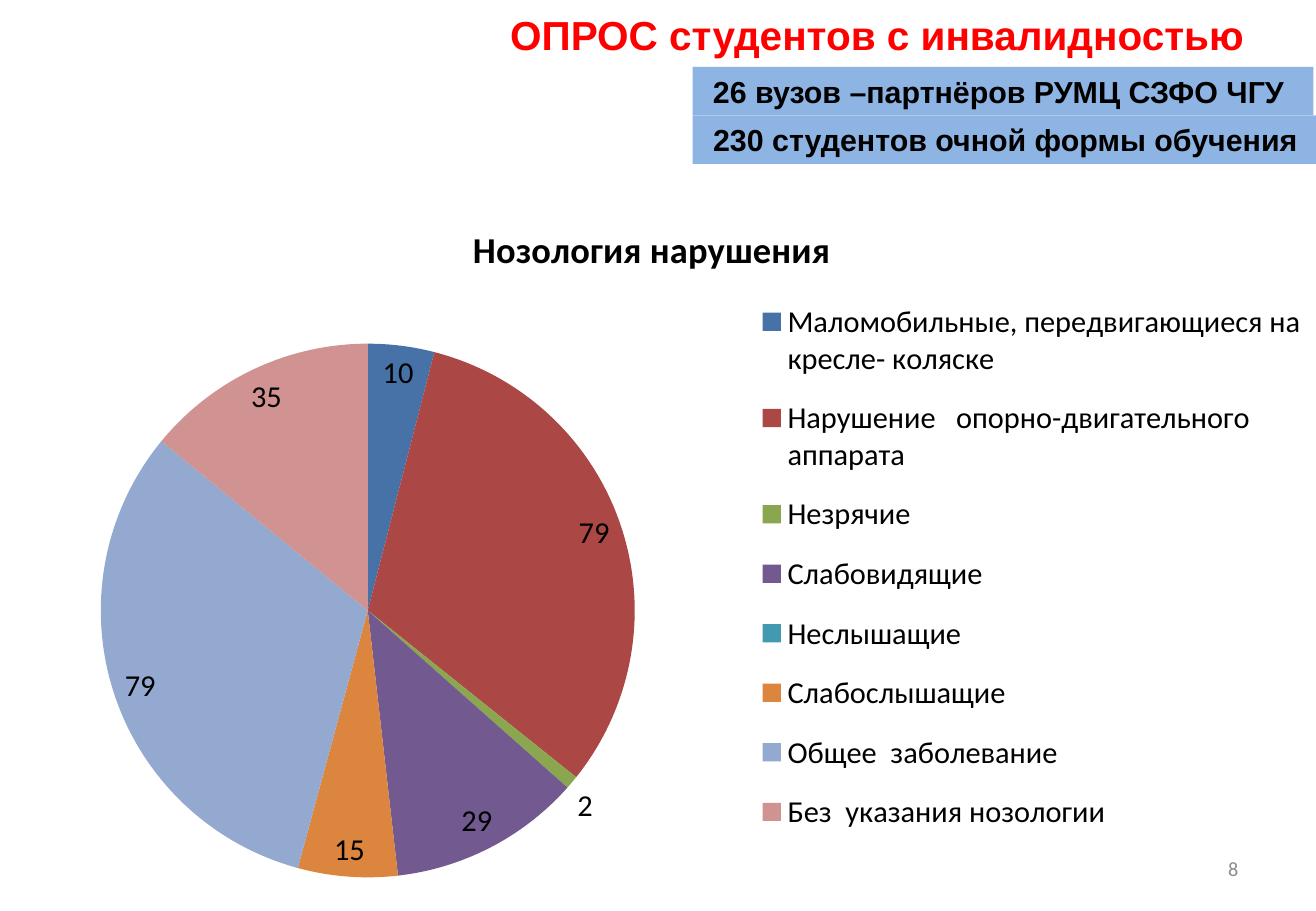
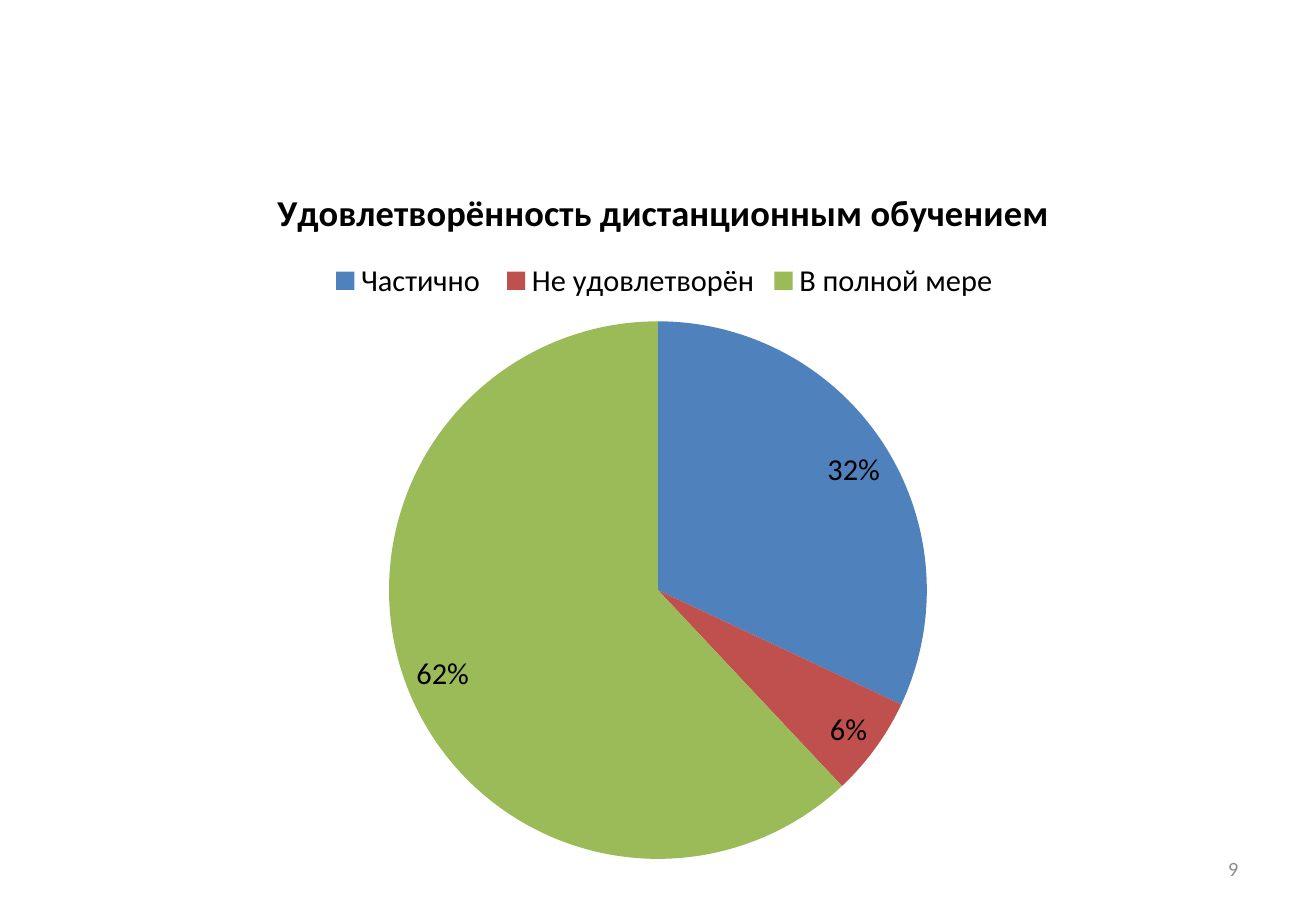
from dataclasses import dataclass
from typing import Optional

from lxml import etree
from pptx import Presentation
from pptx import util as u
from pptx.chart import data as chart_data
from pptx.dml.color import RGBColor
from pptx.enum import chart as charts, shapes, text
from pptx.oxml import ns

WIDTH, HEIGHT = u.Inches(10.83), u.Inches(7.5)

BLACK = RGBColor(0x00, 0x00, 0x00)
RED = RGBColor(0xFF, 0x00, 0x00)
GREY = RGBColor(0x8C, 0x8C, 0x8C)
BAND_BLUE = RGBColor(0x8E, 0xB4, 0xE3)
BLUE = RGBColor(0x4F, 0x81, 0xBD)
BRICK = RGBColor(0xC0, 0x50, 0x4D)
GREEN = RGBColor(0x9B, 0xBB, 0x59)
DEEP_BLUE = RGBColor(0x46, 0x72, 0xA8)
DEEP_BRICK = RGBColor(0xAB, 0x47, 0x44)
DEEP_GREEN = RGBColor(0x8A, 0xA6, 0x4F)
DEEP_PURPLE = RGBColor(0x72, 0x59, 0x90)
DEEP_TEAL = RGBColor(0x42, 0x99, 0xB0)
DEEP_ORANGE = RGBColor(0xDC, 0x85, 0x3E)
PALE_BLUE = RGBColor(0x93, 0xA9, 0xCF)
PALE_ROSE = RGBColor(0xD1, 0x93, 0x92)

HEADING_FONT, BODY_FONT = "Arial", "Calibri"


@dataclass(frozen=True)
class Area:
    """Left, top, width and height in per cent of the enclosing area."""
    left: float
    top: float
    width: float
    height: float

    def on_slide(self) -> tuple[int, int, int, int]:
        return (int(WIDTH * self.left / 100), int(HEIGHT * self.top / 100),
                int(WIDTH * self.width / 100), int(HEIGHT * self.height / 100))


@dataclass(frozen=True)
class TextStyle:
    font: str
    size: float
    color: RGBColor
    bold: bool = False
    align: text.PP_ALIGN = text.PP_ALIGN.LEFT
    anchor: text.MSO_ANCHOR = text.MSO_ANCHOR.TOP


@dataclass(frozen=True)
class Slice:
    label: str
    value: int
    color: RGBColor


@dataclass(frozen=True)
class Survey:
    title: str
    slices: tuple[Slice, ...]
    area: Area
    pie: Area
    legend_position: charts.XL_LEGEND_POSITION
    legend: Optional[Area] = None
    percent: bool = False


HEADING = TextStyle(HEADING_FONT, 24, RED, True, text.PP_ALIGN.CENTER)
BAND = TextStyle(HEADING_FONT, 18, BLACK, True)
PAGE_NUMBER = TextStyle(BODY_FONT, 12, GREY, align=text.PP_ALIGN.RIGHT,
                        anchor=text.MSO_ANCHOR.MIDDLE)

HEADING_AREA = Area(33.98, 0.4, 66.2, 6.67)
NUMBER_AREA = Area(71.65, 92.67, 23.36, 5.33)
BAND_LEFT, BAND_TOP, BAND_HEIGHT = 52.63, 7.33, 5.33
BANDS = ((" 26 вузов –партнёров РУМЦ СЗФО ЧГУ", 47.18),
         (" 230 студентов очной формы обучения", 47.46))

NOSOLOGY = Survey(
    "Нозология нарушения",
    (Slice("Маломобильные, передвигающиеся на кресле- коляске", 10, DEEP_BLUE),
     Slice("Нарушение   опорно-двигательного аппарата", 79, DEEP_BRICK),
     Slice("Незрячие ", 2, DEEP_GREEN),
     Slice("Слабовидящие ", 29, DEEP_PURPLE),
     Slice("Неслышащие ", 0, DEEP_TEAL),
     Slice("Слабослышащие ", 15, DEEP_ORANGE),
     Slice("Общее  заболевание", 79, PALE_BLUE),
     Slice("Без  указания нозологии", 35, PALE_ROSE)),
    Area(-0.92, 21.6, 100.92, 76.67),
    Area(8.5, 21, 40.2, 76.5),
    charts.XL_LEGEND_POSITION.RIGHT,
    Area(57.4, 12, 42.4, 82))

SATISFACTION = Survey(
    "Удовлетворённость дистанционным обучением ",
    (Slice("Частично ", 32, BLUE),
     Slice("Не удовлетворён", 6, BRICK),
     Slice("В полной мере ", 62, GREEN)),
    Area(7.11, 17.47, 87.26, 78.8),
    Area(25.7, 22.6, 46.9, 74.9),
    charts.XL_LEGEND_POSITION.TOP,
    percent=True)


def style_font(font, name: str, size: float, color: RGBColor, bold: bool) -> None:
    font.name, font.size, font.bold = name, u.Pt(size), bold
    font.color.rgb = color


def write(frame, words: str, style: TextStyle) -> None:
    frame.word_wrap = True
    frame.vertical_anchor = style.anchor
    line = frame.paragraphs[0]
    line.alignment = style.align
    run = line.add_run()
    run.text = words
    style_font(run.font, style.font, style.size, style.color, style.bold)


def add_label(slide, words: str, area: Area, style: TextStyle) -> None:
    write(slide.shapes.add_textbox(*area.on_slide()).text_frame, words, style)


def add_band(slide, words: str, area: Area) -> None:
    band = slide.shapes.add_shape(shapes.MSO_SHAPE.RECTANGLE, *area.on_slide())
    band.shadow.inherit = False
    band.fill.solid()
    band.fill.fore_color.rgb = BAND_BLUE
    band.line.fill.background()
    write(band.text_frame, words, BAND)
    band.text_frame.word_wrap = False


def place(parent, area: Area, inner: bool = False) -> None:
    for old in parent.findall(ns.qn("c:layout")):
        parent.remove(old)
    layout = etree.Element(ns.qn("c:layout"))
    manual = etree.SubElement(layout, ns.qn("c:manualLayout"))
    settings = [("layoutTarget", "inner")] if inner else []
    settings += [("xMode", "edge"), ("yMode", "edge")]
    settings += [(tag, f"{share / 100:.3f}") for tag, share in
                 zip("xywh", (area.left, area.top, area.width, area.height))]
    for tag, setting in settings:
        etree.SubElement(manual, ns.qn(f"c:{tag}")).set("val", setting)
    before = parent.find(ns.qn("c:legendPos"))
    parent.insert(0 if before is None else parent.index(before) + 1, layout)


def add_survey(slide, survey: Survey) -> None:
    answers = chart_data.CategoryChartData()
    answers.categories = [part.label for part in survey.slices]
    answers.add_series(survey.title, [part.value for part in survey.slices])
    chart = slide.shapes.add_chart(
        charts.XL_CHART_TYPE.PIE, *survey.area.on_slide(), answers).chart
    style_font(chart.font, BODY_FONT, 18, BLACK, False)

    chart.has_title = True
    heading = chart.chart_title.text_frame.paragraphs[0].add_run()
    heading.text = survey.title
    style_font(heading.font, BODY_FONT, 21.6, BLACK, True)
    chart.chart_title.include_in_layout = False

    chart.has_legend = True
    chart.legend.position = survey.legend_position
    chart.legend.include_in_layout = False
    if survey.legend:
        place(chart.legend._element, survey.legend)

    plot = chart.plots[0]
    plot.vary_by_categories = True
    place(chart._chartSpace.chart.plotArea, survey.pie, inner=True)
    for index, part in enumerate(survey.slices):
        fill = plot.series[0].points[index].format.fill
        fill.solid()
        fill.fore_color.rgb = part.color

    plot.has_data_labels = True
    labels = plot.data_labels
    labels.show_value, labels.show_percentage = not survey.percent, survey.percent
    labels.number_format = "0%" if survey.percent else "0;;;"
    labels.number_format_is_linked = False
    labels.position = charts.XL_LABEL_POSITION.BEST_FIT
    style_font(labels.font, BODY_FONT, 18, BLACK, False)


def add_page(deck, number: int, survey: Survey):
    slide = deck.slides.add_slide(deck.slide_layouts[6])
    add_label(slide, str(number), NUMBER_AREA, PAGE_NUMBER)
    add_survey(slide, survey)
    return slide


def main() -> None:
    deck = Presentation()
    deck.slide_width, deck.slide_height = WIDTH, HEIGHT

    nosology = add_page(deck, 8, NOSOLOGY)
    add_label(nosology, "ОПРОС студентов с инвалидностью ", HEADING_AREA, HEADING)
    for row, (words, width) in enumerate(BANDS):
        top = BAND_TOP + row * BAND_HEIGHT
        add_band(nosology, words, Area(BAND_LEFT, top, width, BAND_HEIGHT))

    add_page(deck, 9, SATISFACTION)
    deck.save("out.pptx")


if __name__ == "__main__":
    main()
